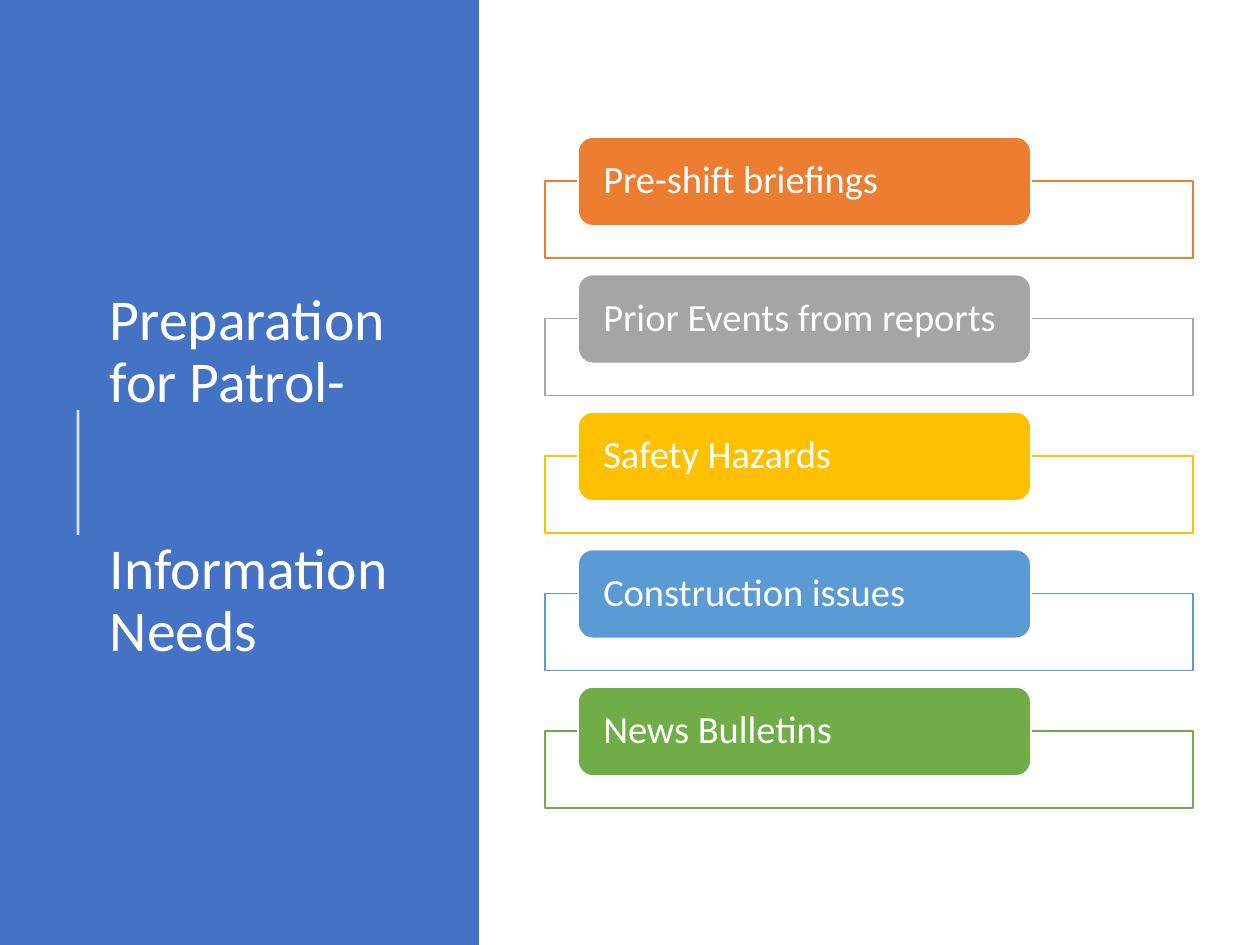
"""Build the patrol preparation slide: a title panel beside five labelled bars."""
from dataclasses import dataclass

from lxml.etree import SubElement
from pptx import Presentation
from pptx.dml.color import RGBColor
from pptx.enum.shapes import MSO_CONNECTOR, MSO_SHAPE as Shape
from pptx.enum.text import MSO_ANCHOR, PP_ALIGN
from pptx.oxml.ns import qn
from pptx.util import Pt

TITLE = ["Preparation for Patrol-", "Information Needs"]
NEEDS = [
    ("Pre-shift briefings", "ED7D31"),
    ("Prior Events from reports", "A5A5A5"),
    ("Safety Hazards", "FFC000"),
    ("Construction issues", "5B9BD5"),
    ("News Bulletins", "70AD47"),
]


@dataclass(frozen=True)
class Theme:
    font: str = "Calibri"
    panel: str = "4472C4"
    white: str = "FFFFFF"
    title_size: int = 33
    label_size: int = 22
    title_gap: int = 71
    bar_line: float = 1
    accent_line: float = 1.5


THEME = Theme()
EMU_PER_PX = 914400 / 126
SLIDE_W, SLIDE_H = 1260, 945
PANEL_W = 479
TITLE_BOX = (97, 98, 348, 759)
ACCENT_X, ACCENT_TOP, ACCENT_BOTTOM = 78, 410, 535
FRAME_X, FRAME_Y, FRAME_W, FRAME_H = 545, 181, 648, 77
LABEL_X, LABEL_Y, LABEL_W, LABEL_H = 578, 137, 453, 89
BARS_SPAN = 550
LABEL_INSETS = (21, 4)
TITLE_INSETS = (13, 6)


def px(*lengths):
    return [round(length * EMU_PER_PX) for length in lengths]


def set_alpha(color_format, percent):
    color = color_format._xFill.find(qn("a:srgbClr"))
    SubElement(color, qn("a:alpha"), val=str(percent * 1000))


def add_block(slide, kind, box, fill, line=None, alpha=None):
    block = slide.shapes.add_shape(kind, *px(*box))
    block.shadow.inherit = False
    block.fill.solid()
    block.fill.fore_color.rgb = RGBColor.from_string(fill)
    if alpha is not None:
        set_alpha(block.fill.fore_color, alpha)
    if line:
        block.line.color.rgb = RGBColor.from_string(line)
        block.line.width = Pt(THEME.bar_line)
    else:
        block.line.fill.background()
    return block


def write(holder, paragraphs, *, size, insets, gap=0):
    frame = holder.text_frame
    frame.word_wrap = True
    frame.vertical_anchor = MSO_ANCHOR.MIDDLE
    frame.margin_left, frame.margin_top = px(*insets)
    frame.margin_right, frame.margin_bottom = px(*insets)
    for index, text in enumerate(paragraphs):
        paragraph = frame.add_paragraph() if index else frame.paragraphs[0]
        paragraph.alignment = PP_ALIGN.LEFT
        paragraph.line_spacing = 0.9
        paragraph.space_before = Pt(gap if index else 0)
        run = paragraph.add_run()
        run.text = text
        run.font.name = THEME.font
        run.font.size = Pt(size)
        run.font.color.rgb = RGBColor.from_string(THEME.white)


def add_accent(slide):
    ends = px(ACCENT_X, ACCENT_BOTTOM, ACCENT_X, ACCENT_TOP)
    accent = slide.shapes.add_connector(MSO_CONNECTOR.STRAIGHT, *ends)
    accent.line.width = Pt(THEME.accent_line)
    accent.line.color.rgb = RGBColor.from_string(THEME.white)
    properties = accent._element.spPr
    color = properties.find(".//" + qn("a:srgbClr"))
    SubElement(color, qn("a:alpha"), val="80000")
    SubElement(properties, qn("a:effectLst"))


def add_need(slide, index, text, color):
    offset = index * BARS_SPAN / (len(NEEDS) - 1)
    frame_box = (FRAME_X, FRAME_Y + offset, FRAME_W, FRAME_H)
    label_box = (LABEL_X, LABEL_Y + offset, LABEL_W, LABEL_H)
    frame = add_block(slide, Shape.RECTANGLE, frame_box, THEME.white, color)
    fill_color = frame._element.spPr.find(qn("a:solidFill")).find(qn("a:srgbClr"))
    SubElement(fill_color, qn("a:alpha"), val="90000")
    label = add_block(slide, Shape.ROUNDED_RECTANGLE, label_box, color, THEME.white)
    write(label, [text], size=THEME.label_size, insets=LABEL_INSETS)


def main():
    deck = Presentation()
    deck.slide_width, deck.slide_height = px(SLIDE_W, SLIDE_H)
    slide = deck.slides.add_slide(deck.slide_layouts[6])
    add_block(slide, Shape.RECTANGLE, (0, 0, PANEL_W, SLIDE_H), THEME.panel)
    title = slide.shapes.add_textbox(*px(*TITLE_BOX))
    write(title, TITLE, size=THEME.title_size, insets=TITLE_INSETS, gap=THEME.title_gap)
    add_accent(slide)
    for index, (text, color) in enumerate(NEEDS):
        add_need(slide, index, text, color)
    deck.save("out.pptx")


if __name__ == "__main__":
    main()
